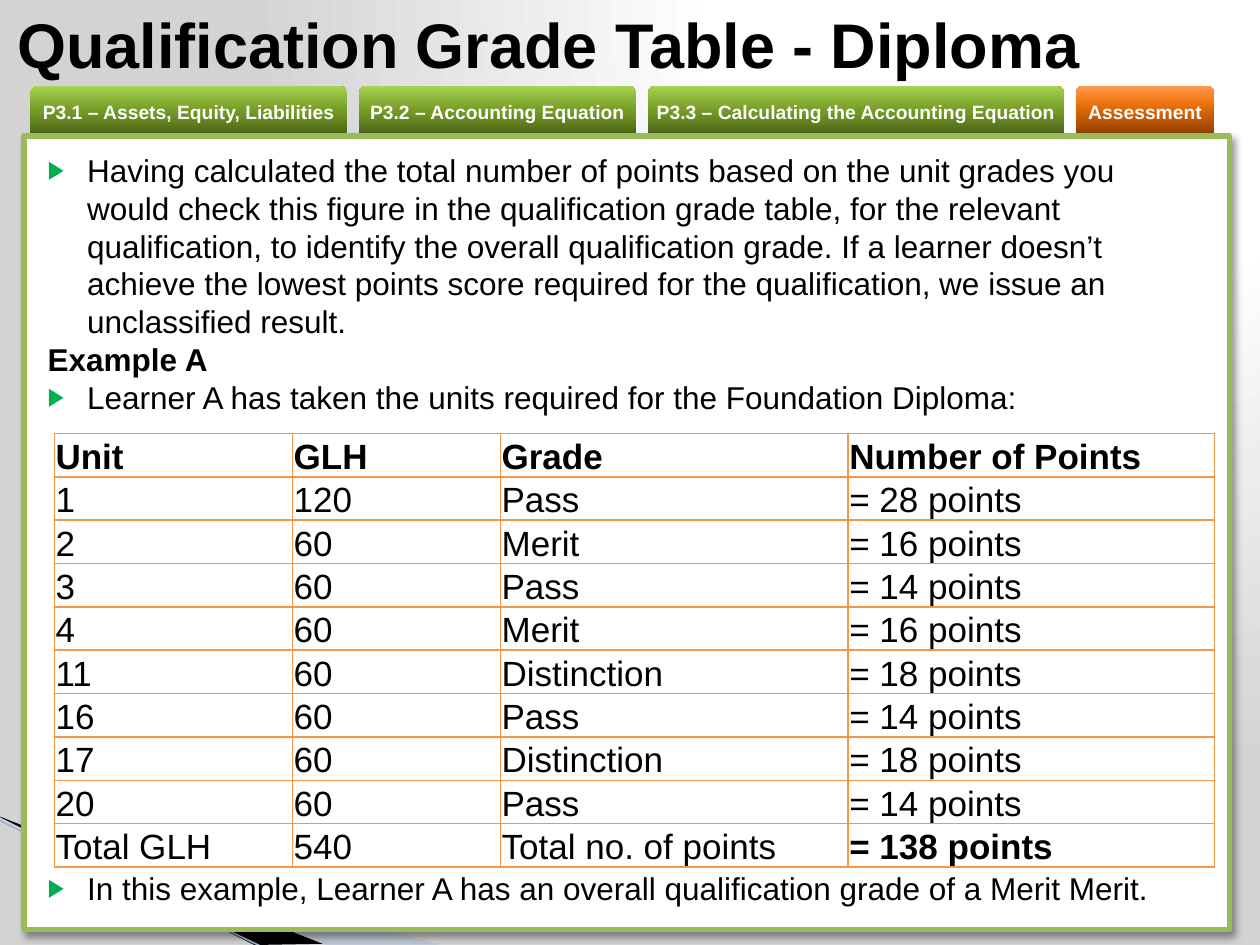
from lxml import etree
from pptx import Presentation
from pptx.dml.color import RGBColor
from pptx.enum.shapes import MSO_CONNECTOR, MSO_SHAPE
from pptx.enum.text import MSO_ANCHOR, PP_ALIGN
from pptx.oxml import parse_xml
from pptx.oxml.ns import nsdecls, qn
from pptx.util import Pt

RECT, TAB = MSO_SHAPE.RECTANGLE, MSO_SHAPE.ROUND_2_SAME_RECTANGLE
STRAIGHT = MSO_CONNECTOR.STRAIGHT
MIDDLE, BOTTOM = MSO_ANCHOR.MIDDLE, MSO_ANCHOR.BOTTOM
CENTER = PP_ALIGN.CENTER

FONT = "Arial"
GREEN = [(0, "4A6316"), (50, "769C27"), (70, "89B137"), (100, "A9D651")]
ORANGE = [(0, "8B3F00"), (50, "DA6606"), (70, "F47917"), (100, "FF9C54")]
BACKDROP = [(0, "FFFFFF"), (40, "FFFFFF"), (100, "D3D3D3")]
UPWARD = '<a:lin ang="16200000" scaled="0"/>'
FROM_TOP_RIGHT = '<a:path path="circle"><a:fillToRect l="65000" b="98000"/></a:path>'

TABS = [
    ("P3.1 – Assets, Equity, Liabilities", 181.3, GREEN),
    ("P3.2 – Accounting Equation", 158.4, GREEN),
    ("P3.3 – Calculating the Accounting Equation", 238.3, GREEN),
    ("Assessment", 79.2, ORANGE),
]
INTRO = (
    "Having calculated the total number of points based on the unit grades you would "
    "check this figure in the qualification grade table, for the relevant qualification, "
    "to identify the overall qualification grade. If a learner doesn’t achieve the lowest "
    "points score required for the qualification, we issue an unclassified result."
)
# text, bulleted, space before
BODY = [
    (INTRO, True, 0),
    ("Example A", False, 0),
    ("Learner A has taken the units required for the Foundation Diploma:", True, 0),
    ("In this example, Learner A has an overall qualification grade of a Merit Merit.",
     True, 259.2),
]
GRADES = [
    ("Unit", "GLH", "Grade", "Number of Points"),
    ("1", "120", "Pass", "= 28 points"),
    ("2", "60", "Merit", "= 16 points"),
    ("3", "60", "Pass", "= 14 points"),
    ("4", "60", "Merit", "= 16 points"),
    ("11", "60", "Distinction", "= 18 points"),
    ("16", "60", "Pass", "= 14 points"),
    ("17", "60", "Distinction", "= 18 points"),
    ("20", "60", "Pass", "= 14 points"),
    ("Total GLH", "540", "Total no. of points", "= 138 points"),
]
COLUMN_WIDTHS = [136.1, 118.8, 198.7, 209.5]
ROW_HEIGHT = 24.77


def rgb(value):
    return RGBColor.from_string(value)


def points(*lengths):
    return [Pt(length) for length in lengths]


def style(p, size, bold=False, color="000000"):
    for r in p.runs:
        r.font.name, r.font.size, r.font.bold = FONT, Pt(size), bold
        r.font.color.rgb = rgb(color)


def gradient(stops, direction):
    marks = "".join(f'<a:gs pos="{pos * 1000}"><a:srgbClr val="{color}"/></a:gs>'
                    for pos, color in stops)
    return parse_xml(f'<a:gradFill {nsdecls("a")} rotWithShape="1">'
                     f'<a:gsLst>{marks}</a:gsLst>{direction}</a:gradFill>')


def set_background(slide):
    slide.background.fill.solid()
    solid = slide._element.find(".//" + qn("p:bgPr")).find(qn("a:solidFill"))
    solid.getparent().replace(solid, gradient(BACKDROP, FROM_TOP_RIGHT))


def add_stripe(slide, corners, color, alpha=None):
    start, *rest = [points(*corner) for corner in corners]
    builder = slide.shapes.build_freeform(*start)
    builder.add_line_segments(rest, close=True)
    sp = builder.convert_to_shape()
    sp.shadow.inherit = False
    sp.fill.solid()
    sp.fill.fore_color.rgb = rgb(color)
    sp.line.fill.background()
    if alpha:
        fill_color = sp._element.spPr.find(qn("a:solidFill"))[0]
        etree.SubElement(fill_color, qn("a:alpha"), val=str(alpha * 1000))


def add_line(slide, start, end, color, width):
    line = slide.shapes.add_connector(STRAIGHT, *points(*start, *end))
    line.line.color.rgb = rgb(color)
    line.line.width = Pt(width)
    etree.SubElement(line._element.spPr, qn("a:effectLst"))


def add_tab(slide, text, left, width, stops):
    sp = slide.shapes.add_shape(TAB, *points(left, 49, width, 28.1))
    sp.shadow.inherit = False
    sp.line.fill.background()
    geometry = sp._element.spPr.find(qn("a:prstGeom"))
    geometry.addnext(gradient(stops, UPWARD))
    tf = sp.text_frame
    tf.margin_left = tf.margin_right = tf.margin_top = tf.margin_bottom = 0
    tf.vertical_anchor = MIDDLE
    tf.text = text
    tf.paragraphs[0].alignment = CENTER
    style(tf.paragraphs[0], 11, True, "FFFFFF")


def add_panel(slide):
    sp = slide.shapes.add_shape(RECT, *points(13.7, 77.8, 689, 453.6))
    sp.fill.solid()
    sp.fill.fore_color.rgb = rgb("FFFFFF")
    sp.line.color.rgb = rgb("9BBB59")
    sp.line.width = Pt(3)
    sp._element.spPr.append(parse_xml(
        f'<a:effectLst {nsdecls("a")}><a:outerShdw blurRad="{Pt(4)}" dist="{Pt(3)}" '
        'dir="2700000" algn="tl" rotWithShape="0"><a:srgbClr val="000000">'
        '<a:alpha val="40000"/></a:srgbClr></a:outerShdw></a:effectLst>'))


def add_text_box(slide, *place):
    tf = slide.shapes.add_textbox(*points(*place)).text_frame
    tf.word_wrap = True
    return tf


def add_bullet(p):
    pPr = p._p.get_or_add_pPr()
    pPr.set("marL", str(Pt(22.5)))
    pPr.set("indent", str(-Pt(22.5)))
    color = etree.SubElement(pPr, qn("a:buClr"))
    etree.SubElement(color, qn("a:srgbClr"), val="00B050")
    etree.SubElement(pPr, qn("a:buSzPct"), val="80000")
    etree.SubElement(pPr, qn("a:buFont"), typeface=FONT)
    etree.SubElement(pPr, qn("a:buChar"), char="▶")


def add_body(slide):
    tf = add_text_box(slide, 20.2, 82.8, 674.6, 443.5)
    for i, (text, bulleted, before) in enumerate(BODY):
        p = tf.paragraphs[0] if i == 0 else tf.add_paragraph()
        p.text = text
        p.line_spacing = Pt(21.6)
        if before:
            p.space_before = Pt(before)
        if bulleted:
            add_bullet(p)
        style(p, 18, bold=not bulleted)


def set_borders(cell, color, width):
    tcPr = cell._tc.get_or_add_tcPr()
    for side in ("lnL", "lnR", "lnT", "lnB"):
        ln = etree.SubElement(tcPr, qn("a:" + side), w=str(Pt(width)))
        fill = etree.SubElement(ln, qn("a:solidFill"))
        etree.SubElement(fill, qn("a:srgbClr"), val=color)


def add_grade_table(slide):
    place = points(31, 247.7, sum(COLUMN_WIDTHS), ROW_HEIGHT * len(GRADES))
    table = slide.shapes.add_table(len(GRADES), len(COLUMN_WIDTHS), *place).table
    table.first_row = table.horz_banding = False
    for column, width in zip(table.columns, COLUMN_WIDTHS):
        column.width = Pt(width)
    for i, (row, texts) in enumerate(zip(table.rows, GRADES)):
        row.height = Pt(ROW_HEIGHT)
        for cell, text in zip(row.cells, texts):
            cell.margin_left = cell.margin_right = cell.margin_top = Pt(0.75)
            cell.margin_bottom = 0
            cell.vertical_anchor = BOTTOM
            set_borders(cell, "F79646", 1)
            cell.fill.background()
            cell.text = text
            style(cell.text_frame.paragraphs[0], 20, i == 0 or text == "= 138 points")


def main():
    prs = Presentation()
    prs.slide_width, prs.slide_height = points(720, 540)
    slide = prs.slides.add_slide(prs.slide_layouts[6])

    # Backdrop with corner stripes
    set_background(slide)
    add_stripe(slide, [(-0.7, 468), (251.3, 540), (186.5, 540), (-0.7, 467.3)], "A7B9DB", 40)
    add_stripe(slide, [(0, 466.6), (184.3, 539.3), (145.4, 540), (0.7, 467.3)], "000000")
    add_line(slide, (-0.7, 468.7), (150.5, 541.4), "9EB3D6", 0.95)

    # Navigation tabs above the panel
    left = 17.3
    for text, width, stops in TABS:
        add_tab(slide, text, left, width, stops)
        left += width + 6.5
    add_panel(slide)

    # Title
    tf = add_text_box(slide, 2.9, 0, 691.9, 49)
    tf.vertical_anchor = MIDDLE
    tf.text = "Qualification Grade Table - Diploma"
    style(tf.paragraphs[0], 36, True)

    # Worked example
    add_body(slide)
    add_grade_table(slide)
    prs.save("out.pptx")


if __name__ == "__main__":
    main()
